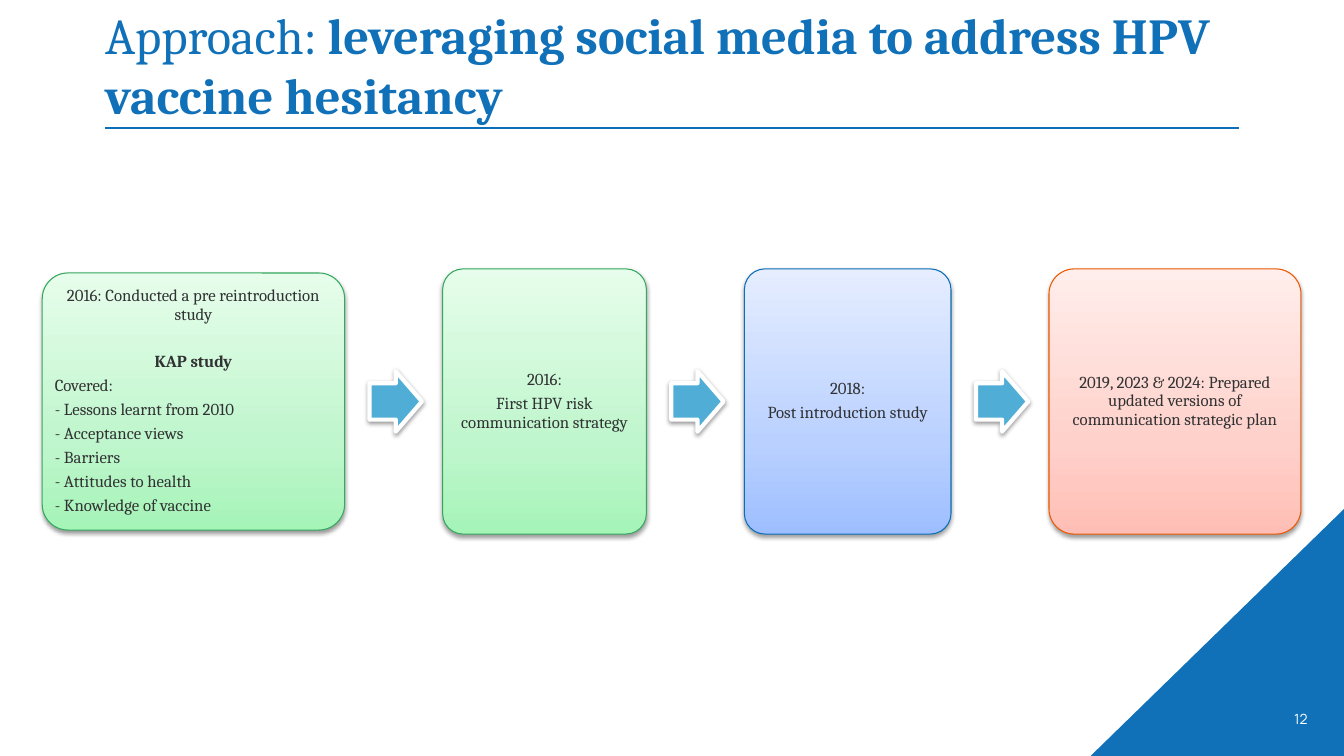
import copy
import pptx
import pptx.util
import pptx.dml.color
import pptx.enum.shapes
import pptx.enum.text
import pptx.oxml
import pptx.oxml.ns
import pptx.oxml.xmlchemy

Pt = pptx.util.Pt
Shape = pptx.enum.shapes.MSO_SHAPE
Align = pptx.enum.text.PP_ALIGN
Anchor = pptx.enum.text.MSO_ANCHOR
qn = pptx.oxml.ns.qn
BLUE = "1070B8"
SHADOW = (
    '<a:outerShdw xmlns:a="http://schemas.openxmlformats.org/drawingml/2006/main"'
    ' blurRad="40000" dist="20000" dir="5400000" rotWithShape="0">'
    '<a:srgbClr val="000000"><a:alpha val="38000"/></a:srgbClr></a:outerShdw>'
)


def color(code):
    return pptx.dml.color.RGBColor.from_string(code)


def add_block(kind, left, top, width, height, edge, weight):
    """Add an outlined shape with a soft shadow below it."""
    block = slide.shapes.add_shape(kind, Pt(left), Pt(top), Pt(width), Pt(height))
    block.line.color.rgb = color(edge)
    block.line.width = Pt(weight)
    block.shadow.inherit = False
    effects = block._element.spPr.find(qn("a:effectLst"))
    effects.append(pptx.oxml.parse_xml(SHADOW))
    return block


deck = pptx.Presentation()
deck.slide_width, deck.slide_height = Pt(960), Pt(540)
slide = deck.slides.add_slide(deck.slide_layouts[5])

# Corner triangle
corner = slide.shapes.add_shape(
    Shape.ISOSCELES_TRIANGLE, Pt(779), Pt(363.6), Pt(181), Pt(176.4))
corner.adjustments[0] = 1
corner.fill.solid()
corner.fill.fore_color.rgb = color(BLUE)
corner.line.fill.background()
corner.shadow.inherit = False

# Rule under the title
rule = slide.shapes.add_connector(
    pptx.enum.shapes.MSO_CONNECTOR.STRAIGHT, Pt(75), Pt(91.5), Pt(885), Pt(91.5))
rule.line.color.rgb = color("0C6EB8")
rule.line.width = Pt(1)
rule._element.spPr.append(pptx.oxml.xmlchemy.OxmlElement("a:effectLst"))

# Title
title = slide.shapes.title
title.left, title.top, title.width, title.height = Pt(75), Pt(19.5), Pt(810.7), Pt(69.8)
frame = title.text_frame
frame.text = "Approach: "
frame.word_wrap = True
frame.auto_size = pptx.enum.text.MSO_AUTO_SIZE.NONE
frame.vertical_anchor = Anchor.BOTTOM
frame.margin_left = frame.margin_bottom = 0
frame.margin_top, frame.margin_right = Pt(3.6), Pt(7.2)
line = frame.paragraphs[0]
line.alignment = Align.LEFT
strong = line.add_run()
strong.text = "leveraging social media to address HPV vaccine hesitancy"
strong.font.bold = True
for run in line.runs:
    run.font.name = "Cambria"
    run.font.size = Pt(36)
    run.font.color.rgb = color(BLUE)

# Slide number
number = slide.shapes.add_textbox(Pt(717), Pt(499), Pt(224), Pt(28.8))
frame = number.text_frame
frame.text = "12"
frame.word_wrap = True
frame.vertical_anchor = Anchor.MIDDLE
line = frame.paragraphs[0]
line.alignment = Align.RIGHT
line.runs[0].font.name = "Manrope"
line.runs[0].font.size = Pt(10)
line.runs[0].font.color.rgb = color("FFFFFF")

# Steps: width, height, edge, shades from bottom to top, lines
GREEN = ("35A85F", ("A5F4B8", "C0F6CD", "E6FDEB"))
STEPS = [
    (216, 183.6, *GREEN, [
        "2016: Conducted a pre reintroduction study", "KAP study", "Covered:",
        "- Lessons learnt from 2010", "- Acceptance views", "- Barriers",
        "- Attitudes to health", "- Knowledge of vaccine"]),
    (145.5, 189.4, *GREEN, ["2016:", "First HPV risk communication strategy"]),
    (147.6, 189.4, "0C6EB8", ("9DBEFF", "BAD1FF", "E5EDFF"),
     ["2018:", "Post introduction study"]),
    (180, 189.4, "ED5800", ("FFBEB5", "FFD1CB", "FFEEEB"),
     ["2019, 2023 & 2024: Prepared updated versions of communication strategic plan"]),
]
MIDDLE, GAP = 286.8, 70
left = 30.2
for index, (width, height, edge, shades, lines) in enumerate(STEPS):
    # Arrow from the step before
    if index:
        arrow = add_block(Shape.RIGHT_ARROW, left - GAP + 17.8, MIDDLE - 21.6,
                          37.4, 43.2, "FFFFFF", 3)
        arrow.adjustments[0], arrow.adjustments[1] = 0.6, 0.5
        arrow.fill.solid()
        arrow.fill.fore_color.rgb = color("50AED6")

    # Card with a three-stop gradient
    card = add_block(Shape.ROUNDED_RECTANGLE, left, MIDDLE - height / 2,
                     width, height, edge, 0.75)
    card.adjustments[0] = 0.1
    card.fill.gradient()
    card.fill.gradient_angle = 90
    stops = card._element.spPr.find(".//" + qn("a:gsLst"))
    stops.append(copy.deepcopy(stops[0]))
    for stop, place, shade in zip(card.fill.gradient_stops, (0, 0.35, 1), shades):
        stop.position = place
        stop.color.rgb = color(shade)

    # Card text
    frame = card.text_frame
    frame.text = "\n".join(lines)
    frame.word_wrap = True
    frame.vertical_anchor = Anchor.MIDDLE
    frame.margin_left = frame.margin_right = Pt(3.6)
    frame.margin_top = frame.margin_bottom = Pt(3.6)
    for row, line in enumerate(frame.paragraphs):
        line.alignment = Align.LEFT if row > 1 else Align.CENTER
        line.line_spacing = 0.9
        line.space_after = Pt(4.2)
        font = line.runs[0].font
        font.name = "Cambria"
        font.size = Pt(12)
        font.color.rgb = color("313233")
        if line.text == "KAP study":
            font.bold = True
            line.space_before = Pt(17)
    left += width + GAP

deck.save("out.pptx")
